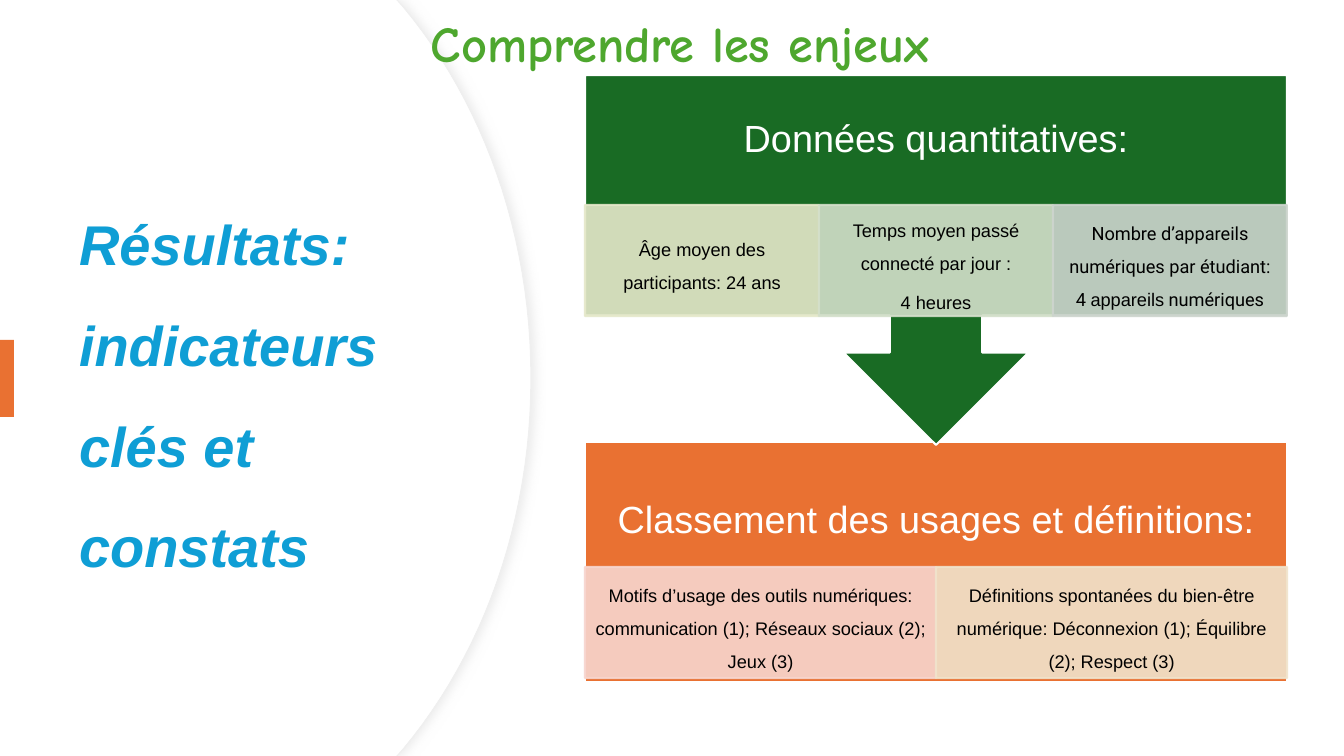
from itertools import cycle

from lxml.etree import SubElement
from pptx import Presentation
from pptx.dml.color import RGBColor
from pptx.enum.shapes import MSO_SHAPE as Shape
from pptx.enum.text import MSO_ANCHOR as Anchor, MSO_AUTO_SIZE as AutoSize, PP_ALIGN as Align
from pptx.oxml.ns import qn
from pptx.util import Pt

WIDTH, HEIGHT = 1344, 756
SCALE = 12192000 / WIDTH
COLOURS = {
    "white": "FFFFFF", "black": "000000", "outline": "EFEFEF", "shadow": "D9D9D9",
    "blue": "0F9ED5", "orange": "E97132", "green": "196B24", "leaf": "4EA72E",
    "pink": "F7D5CE", "sand": "F0E3CB", "lime": "E5E8CA", "sage": "D3DFCA", "mist": "CCD4CD",
}


def emu(px):
    return round(px * SCALE)


def rgb(name):
    return RGBColor.from_string(COLOURS[name])


def write(frame, text, size=13, colour="black", fonts=("Arial",), bold=False, italic=False,
          align=Align.CENTER, anchor=Anchor.MIDDLE, spacing=1.5, after=0.35, insets=(10, 2)):
    frame.word_wrap = True
    frame.auto_size = AutoSize.NONE
    frame.vertical_anchor = anchor
    frame.margin_left = frame.margin_right = emu(insets[0])
    frame.margin_top = frame.margin_bottom = emu(insets[1])
    for index, line in enumerate(text.split("\n")):
        paragraph = frame.add_paragraph() if index else frame.paragraphs[0]
        paragraph.alignment = align
        paragraph.line_spacing = spacing
        paragraph.space_before = Pt(0)
        paragraph.space_after = Pt(round(size * after, 1))
        for part, font_name in zip(line.split("|"), cycle(fonts)):
            run = paragraph.add_run()
            run.text = part
            run.font.name = font_name
            run.font.size = Pt(size)
            run.font.bold = bold
            run.font.italic = italic
            run.font.color.rgb = rgb(colour)


def arc_outline(right):
    start, pull_1, pull_2, end = (right - 127, 8), (right - 48, 103), (right, 234), (right, 378)
    steps = 24
    upper = [(0, 0), (right - 134, 0)]
    for step in range(steps + 1):
        t = step / steps
        weights = ((1 - t) ** 3, 3 * t * (1 - t) ** 2, 3 * t * t * (1 - t), t ** 3)
        upper.append(tuple(sum(w * p[axis] for w, p in zip(weights, (start, pull_1, pull_2, end)))
                           for axis in (0, 1)))
    lower = [(x, HEIGHT - y) for x, y in reversed(upper[:-1])]
    return [(emu(x), emu(y)) for x, y in upper + lower]


class SlideBuilder:
    """Holds the style and the current slide, with a method for each kind of element."""

    def __init__(self, deck):
        self.slide = deck.slides.add_slide(deck.slide_layouts[5])
        self.shapes = self.slide.shapes

    def paint(self, shape, fill, line=None, weight=1.5, alpha=None):
        shape.shadow.inherit = False
        shape.fill.solid()
        shape.fill.fore_color.rgb = rgb(fill)
        if line:
            shape.line.color.rgb = rgb(line)
            shape.line.width = Pt(weight)
        else:
            shape.line.fill.background()
        if alpha:
            for colour in shape.element.spPr.iter(qn("a:srgbClr")):
                SubElement(colour, qn("a:alpha"), val=str(alpha * 1000))
        return shape

    def panel(self, right, line=None, shadow=False):
        outline = arc_outline(right)
        builder = self.shapes.build_freeform(*outline[0], scale=1.0)
        builder.add_line_segments(outline[1:], close=True)
        panel = self.paint(builder.convert_to_shape(), "white", line, 0.75)
        if shadow:
            effects = panel.element.spPr.find(qn("a:effectLst"))
            outer = SubElement(effects, qn("a:outerShdw"), blurRad=str(Pt(7)), dist=str(Pt(3)),
                               dir="0", algn="l", rotWithShape="0")
            tint = SubElement(outer, qn("a:srgbClr"), val=COLOURS["shadow"])
            SubElement(tint, qn("a:alpha"), val="50000")

    def title(self, text, box, **style):
        title = self.shapes.title
        title.left, title.top, title.width, title.height = map(emu, box)
        title.element.getparent().append(title.element)
        write(title.text_frame, text, **style)

    def block(self, kind, box, fill, **style):
        return self.paint(self.shapes.add_shape(kind, *map(emu, box)), fill, **style)

    def label(self, text, box, **style):
        write(self.shapes.add_textbox(*map(emu, box)).text_frame, text, **style)

    def row(self, left, top, width, height, cells):
        step = width // len(cells)
        for column, (text, fill, fonts) in enumerate(cells):
            cell = self.block(Shape.RECTANGLE, (left + column * step, top, step, height),
                              fill, line=fill, alpha=90)
            write(cell.text_frame, text, fonts=fonts)


def main():
    deck = Presentation()
    deck.slide_width, deck.slide_height = emu(WIDTH), emu(HEIGHT)
    page = SlideBuilder(deck)
    left, width, cell_height = 585, 702, 111
    arial = ("Arial",)
    heading = dict(size=27, colour="white", insets=(21, 21))

    page.panel(531, line="outline", shadow=True)
    page.panel(530)
    page.title("Résultats: indicateurs clés et constats", (69, 128, 397, 499), size=40,
               colour="blue", bold=True, italic=True, align=Align.LEFT, after=0, insets=(10, 5))
    page.block(Shape.RECTANGLE, (0, 340, 14, 77), "orange")

    page.block(Shape.RECTANGLE, (left, 442, width, 240), "orange", line="white")
    page.label("Classement des usages et définitions:", (left, 442, width, 130), **heading)
    page.row(left, 567, width, cell_height, [
        ("Motifs d’usage des outils numériques: communication (1); Réseaux sociaux (2); Jeux (3)",
         "pink", arial),
        ("Définitions spontanées du bien-être numérique: Déconnexion (1); Équilibre (2); Respect (3)",
         "sand", arial),
    ])

    callout = page.block(Shape.UP_ARROW_CALLOUT, (left, 75, width, 370), "green", line="white")
    callout.rotation = 180
    page.label("Données quantitatives:", (left, 75, width, 130), spacing=0.9, **heading)
    page.row(left, 205, width, cell_height, [
        ("Âge moyen des participants: 24 ans", "lime", arial),
        ("Temps moyen passé connecté par jour :\n4 heures", "sage", arial),
        ("Nombre d’appareils numériques par étudiant: 4 |appareils| numériques",
         "mist", ("Roboto", "Arial")),
    ])

    page.label("Comprendre les enjeux", (421, 7, 574, 71), size=36, colour="leaf", bold=True,
               fonts=("Comic Neue",), align=Align.LEFT, anchor=Anchor.TOP, spacing=1.0,
               after=0, insets=(10, 5))
    deck.save("out.pptx")


if __name__ == "__main__":
    main()
